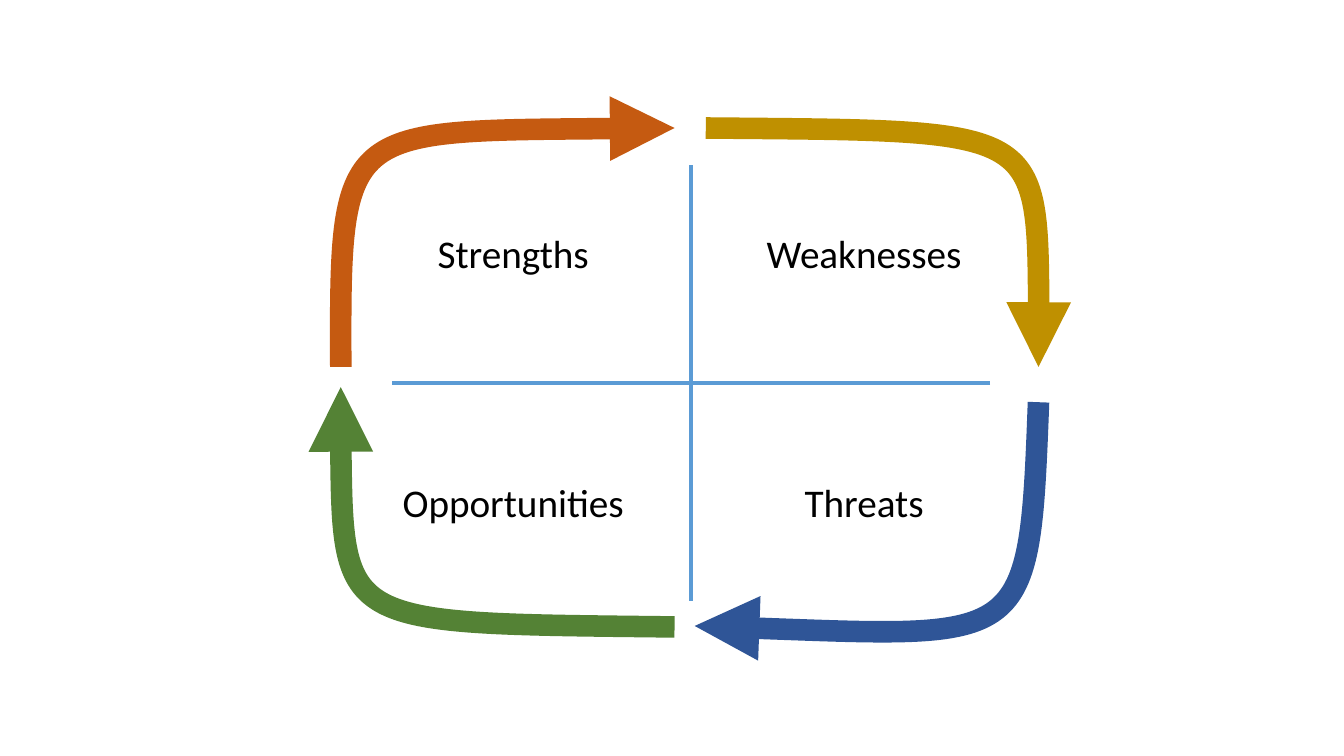
from lxml.etree import SubElement
from pptx import Presentation
from pptx.dml.color import RGBColor
from pptx.enum.shapes import MSO_CONNECTOR
from pptx.enum.text import MSO_ANCHOR, PP_ALIGN
from pptx.oxml.ns import qn
from pptx.util import Inches, Pt

QUADRANTS = [["Strengths", "Weaknesses"],
             ["Opportunities", "Threats"]]
GRID_LEFT, GRID_TOP = 3.35, 1.27
CELL_WIDTH, CELL_HEIGHT = 3.48, 2.47
LABEL_FONT = {"name": "Calibri", "size": Pt(28)}

# Each arrow: colour, then start, two control points and tip
CYCLE_ARROWS = [
    ("C55A11", [(3.38, 3.64), (3.37, 1.23), (3.39, 1.3), (6.69, 1.27)]),
    ("2F5597", [(10.3, 3.99), (10.21, 6.4), (10.19, 6.33), (6.89, 6.21)]),
    ("BF9000", [(7, 1.27), (10.3, 1.3), (10.32, 1.23), (10.3, 3.64)]),
    ("548235", [(6.69, 6.22), (3.39, 6.18), (3.37, 6.25), (3.38, 3.84)]),
]
AXES = [((6.85, 1.64), (6.85, 5.96)), ((9.82, 3.8), (3.89, 3.8))]
AXIS_COLOUR = "5B9BD5"


def paint(colour_format, colour):
    colour_format.rgb = RGBColor.from_string(colour)


def style_line(line, colour, width):
    line.fill.solid()
    paint(line.color, colour)
    line.width = Pt(width)


def add_label(slide, label, row, column):
    box = slide.shapes.add_textbox(
        Inches(GRID_LEFT + column * CELL_WIDTH), Inches(GRID_TOP + row * CELL_HEIGHT),
        Inches(CELL_WIDTH), Inches(CELL_HEIGHT))
    frame = box.text_frame
    frame.word_wrap = True
    frame.vertical_anchor = MSO_ANCHOR.MIDDLE
    paragraph = frame.paragraphs[0]
    paragraph.text = label
    paragraph.alignment = PP_ALIGN.CENTER
    font = paragraph.runs[0].font
    for attribute, value in LABEL_FONT.items():
        setattr(font, attribute, value)
    paint(font.color, "000000")


def add_curved_arrow(slide, colour, points):
    """Draw one cubic Bezier curve with an arrowhead at its last point."""
    start, *rest = [(Inches(x), Inches(y)) for x, y in points]
    builder = slide.shapes.build_freeform(*start, scale=1.0)
    builder.add_line_segments(rest, close=False)
    arrow = builder.convert_to_shape()
    arrow.shadow.inherit = False
    arrow.fill.background()
    style_line(arrow.line, colour, 15.38)
    SubElement(arrow.line._get_or_add_ln(), qn("a:tailEnd"), type="triangle")

    # The three straight segments become one cubic segment
    outline = next(arrow._element.iter(qn("a:path")))
    segments = outline.findall(qn("a:lnTo"))
    curve = SubElement(outline, qn("a:cubicBezTo"))
    for segment in segments:
        curve.append(segment[0])
        outline.remove(segment)


def add_axis(slide, start, end):
    axis = slide.shapes.add_connector(
        MSO_CONNECTOR.STRAIGHT, *[Inches(value) for value in (*start, *end)])
    style_line(axis.line, AXIS_COLOUR, 3)
    SubElement(axis._element.spPr, qn("a:effectLst"))


def main():
    deck = Presentation()
    deck.slide_width, deck.slide_height = Inches(13.33), Inches(7.5)
    slide = deck.slides.add_slide(deck.slide_layouts[6])
    for row, labels in enumerate(QUADRANTS):
        for column, label in enumerate(labels):
            add_label(slide, label, row, column)
    for colour, points in CYCLE_ARROWS:
        add_curved_arrow(slide, colour, points)
    for start, end in AXES:
        add_axis(slide, start, end)
    deck.save("out.pptx")


if __name__ == "__main__":
    main()
